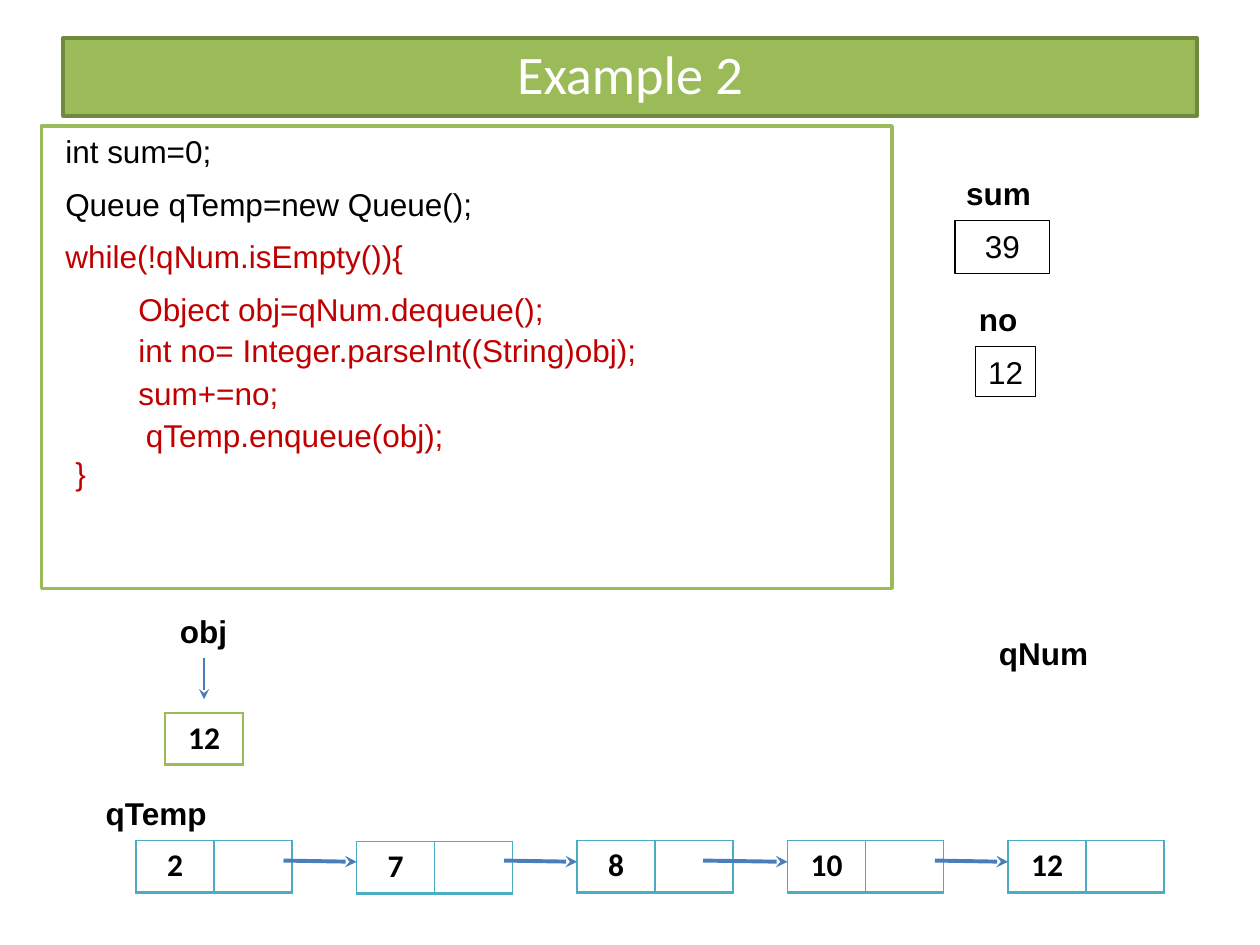
from lxml import etree
from pptx import Presentation
from pptx.dml.color import RGBColor
from pptx.enum.shapes import MSO_CONNECTOR, MSO_SHAPE
from pptx.enum.text import MSO_ANCHOR, MSO_AUTO_SIZE, PP_ALIGN
from pptx.oxml import parse_xml
from pptx.oxml.ns import nsdecls, qn
from pptx.util import Inches, Pt

RECT = MSO_SHAPE.RECTANGLE
STRAIGHT = MSO_CONNECTOR.STRAIGHT
MIDDLE = MSO_ANCHOR.MIDDLE
GROW = MSO_AUTO_SIZE.SHAPE_TO_FIT_TEXT
NO_FIT = MSO_AUTO_SIZE.NONE
LEFT, CENTER = PP_ALIGN.LEFT, PP_ALIGN.CENTER

BLACK = RGBColor(0x00, 0x00, 0x00)
WHITE = RGBColor(0xFF, 0xFF, 0xFF)
RED = RGBColor(0xC0, 0x00, 0x00)
GREEN = RGBColor(0x9B, 0xBB, 0x59)
DARK_GREEN = RGBColor(0x71, 0x89, 0x3F)
TEAL = RGBColor(0x4B, 0xAC, 0xC6)
BLUE = RGBColor(0x4A, 0x7E, 0xBB)

CELL_W, CELL_H = 0.62, 0.41
LINE_H = 0.4


def write(tf, text, size=18, font="Arial", color=BLACK, bold=False,
          align=LEFT, indent=0, first=True):
    p = tf.paragraphs[0] if first else tf.add_paragraph()
    p.alignment = align
    if indent:
        p._p.get_or_add_pPr().set("marL", str(Inches(indent)))
    r = p.add_run()
    r.text = text
    r.font.size = Pt(size)
    r.font.name = font
    r.font.bold = bold
    r.font.color.rgb = color
    return p


def add_label(s, x, y, w, text, h=LINE_H, **fmt):
    tf = s.shapes.add_textbox(Inches(x), Inches(y), Inches(w), Inches(h)).text_frame
    tf.word_wrap = False
    tf.auto_size = GROW
    write(tf, text, **fmt)
    return tf


def add_box(s, x, y, w, h, line, width, fill=None):
    sp = s.shapes.add_shape(RECT, Inches(x), Inches(y), Inches(w), Inches(h))
    sp.shadow.inherit = False
    if fill is None:
        sp.fill.background()
    else:
        sp.fill.solid()
        sp.fill.fore_color.rgb = fill
    sp.line.color.rgb = line
    sp.line.width = Pt(width)
    return sp


def add_arrow(s, x1, y1, x2, y2, width):
    c = s.shapes.add_connector(STRAIGHT, Inches(x1), Inches(y1), Inches(x2), Inches(y2))
    c.line.color.rgb = BLUE
    c.line.width = Pt(width)
    etree.SubElement(c.line._get_or_add_ln(), qn("a:tailEnd"), type="stealth")
    etree.SubElement(c._element.spPr, qn("a:effectLst"))


def add_borders(cell, color):
    tc_pr = cell._tc.get_or_add_tcPr()
    for i, (side, width) in enumerate((("L", 1), ("R", 1), ("T", 1), ("B", 2))):
        tc_pr.insert(i, parse_xml(
            f'<a:ln{side} {nsdecls("a")} w="{Pt(width)}"><a:solidFill>'
            f'<a:srgbClr val="{color}"/></a:solidFill></a:ln{side}>'))


def add_node(s, x, y, values, color):
    table = s.shapes.add_table(1, len(values), Inches(x), Inches(y),
                               Inches(CELL_W * len(values)), Inches(CELL_H)).table
    table.first_row = False
    table.horz_banding = False
    for i, value in enumerate(values):
        table.columns[i].width = Inches(CELL_W)
        cell = table.cell(0, i)
        cell.fill.background()
        add_borders(cell, color)
        if value:
            write(cell.text_frame, value, font="Calibri", bold=True, align=CENTER)


def add_title(s, x, y, w, h):
    sp = s.shapes.title
    sp.left, sp.top, sp.width, sp.height = Inches(x), Inches(y), Inches(w), Inches(h)
    sp.fill.solid()
    sp.fill.fore_color.rgb = GREEN
    sp.line.color.rgb = DARK_GREEN
    sp.line.width = Pt(2)
    tf = sp.text_frame
    tf.auto_size = NO_FIT
    tf.vertical_anchor = MIDDLE
    p = write(tf, "Example 2", size=31, font="Calibri", color=WHITE, align=CENTER)
    p.line_spacing = 0.9


def add_code(s, x, y, w, h):
    add_box(s, x, y, w, h, GREEN, 2, fill=WHITE)
    outer, inner = x + 0.09, x + 0.67
    lines = (
        (outer, 0, 1.37, "int sum=0;", BLACK),
        (outer, 0.42, 3.46, "Queue qTemp=new Queue();", BLACK),
        (outer, 0.83, 2.91, "while(!qNum.isEmpty()){", RED),
        (inner, 1.25, 3.45, "Object obj=qNum.dequeue();", RED),
        (inner, 1.58, 4.19, "int no= Integer.parseInt((String)obj);", RED),
        (inner, 1.92, 1.32, "sum+=no;", RED),
    )
    for left, dy, width, text, color in lines:
        add_label(s, left, y + dy, width, text, color=color)
    tf = add_label(s, x + 0.17, y + 2.25, 3.15, "qTemp.enqueue(obj);",
                   h=0.71, color=RED, indent=0.56)
    write(tf, "}", color=RED, first=False)


def add_variable(s, x, y, w, h, name, value, label_x, label_w):
    add_label(s, label_x, y - 0.42, label_w, name, bold=True)
    tf = add_box(s, x, y, w, h, BLACK, 0.75).text_frame
    tf.vertical_anchor = MSO_ANCHOR.TOP
    tf.word_wrap = False
    write(tf, value, align=CENTER)


def add_object(s, x, y):
    add_label(s, x + 0.02, y, 0.58, "obj", bold=True)
    add_arrow(s, x + 0.31, y + 0.41, x + 0.31, y + 0.74, 0.75)
    add_node(s, x, y + 0.85, ["12"], GREEN)


def add_queue(s, x, y):
    add_label(s, x - 0.34, y - 0.42, 1.01, "qTemp", bold=True)
    nodes = (("2", 0, 0), ("7", 1.75, 0.01), ("8", 3.5, 0),
             ("10", 5.17, 0), ("12", 6.92, 0))
    for value, dx, dy in nodes:
        add_node(s, x + dx, y + dy, [value, ""], TEAL)
    for start, (_, end, _) in zip((1.17, 2.92, 4.5, 6.34), nodes[1:]):
        add_arrow(s, x + start, y + 0.16, x + end, y + 0.17, 2.25)


def main():
    prs = Presentation()
    prs.slide_width, prs.slide_height = Inches(10), Inches(7.5)
    s = prs.slides.add_slide(prs.slide_layouts[5])
    add_title(s, 0.5, 0.3, 9, 0.62)
    add_code(s, 0.33, 1, 6.75, 3.67)
    add_variable(s, 7.58, 1.75, 0.75, 0.42, "sum", "39", 7.57, 0.72)
    add_variable(s, 7.74, 2.75, 0.48, 0.4, "no", "12", 7.67, 0.51)
    add_label(s, 7.83, 4.98, 0.92, "qNum", bold=True)
    add_object(s, 1.31, 4.81)
    add_queue(s, 1.08, 6.67)
    prs.save("out.pptx")


if __name__ == "__main__":
    main()
